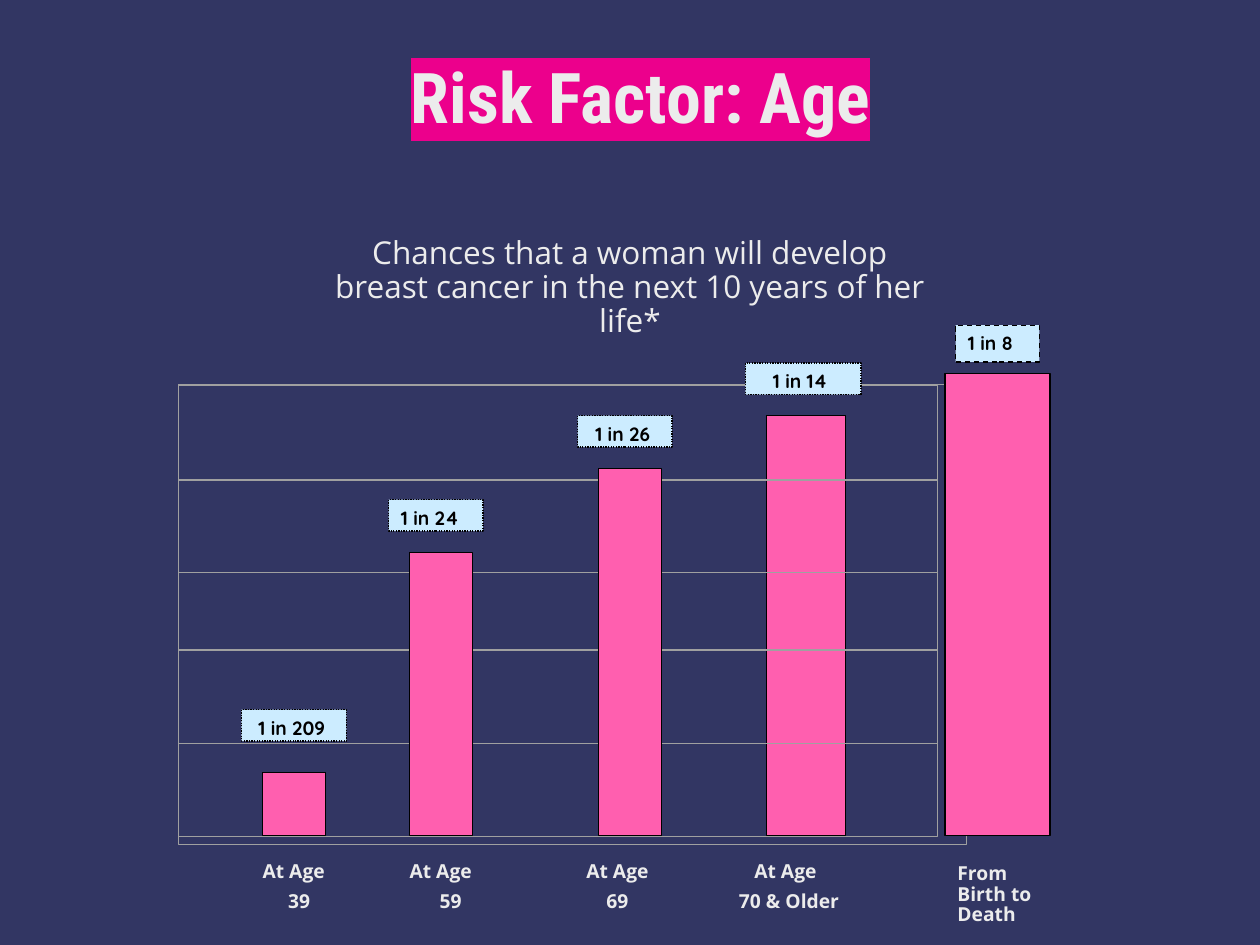
from itertools import pairwise

from lxml import etree
from pptx import Presentation
from pptx.dml.color import RGBColor
from pptx.enum.dml import MSO_LINE
from pptx.enum.shapes import MSO_SHAPE
from pptx.enum.text import MSO_ANCHOR, MSO_AUTO_SIZE, PP_ALIGN
from pptx.oxml.ns import qn
from pptx.util import Pt

COLORS = {
    "background": "323663", "text": "ECECEC", "highlight": "EC008C",
    "bar": "FF5FAF", "label": "CCECFF", "grid": "A0A0A0", "black": "000000",
}
FONTS = {
    "title": {"name": "Roboto Condensed", "size": Pt(40), "bold": True},
    "subtitle": {"name": "Open Sans", "size": Pt(18), "bold": False},
    "axis": {"name": "Open Sans", "size": Pt(11), "bold": True},
    "label": {"name": "Quicksand", "size": Pt(11), "bold": True},
}
FRAME_FORMAT = {
    "word_wrap": True, "auto_size": MSO_AUTO_SIZE.NONE,
    "vertical_anchor": MSO_ANCHOR.TOP,
    "margin_left": Pt(7.2), "margin_right": Pt(7.2),
    "margin_top": Pt(3.6), "margin_bottom": Pt(3.6),
}


def add_box(left, top, width, height, fill=None, line="black", dash=None):
    shape = slide.shapes.add_shape(
        MSO_SHAPE.RECTANGLE, Pt(left), Pt(top), Pt(width), Pt(height))
    shape.shadow.inherit = False
    if fill:
        shape.fill.solid()
        shape.fill.fore_color.rgb = RGBColor.from_string(COLORS[fill])
    else:
        shape.fill.background()
    shape.line.color.rgb = RGBColor.from_string(COLORS[line])
    shape.line.width = Pt(0.75)
    if dash:
        shape.line.dash_style = dash
    return shape


def write_text(shape, lines, font, color="text", **paragraph_format):
    frame = shape.text_frame
    for name, value in FRAME_FORMAT.items():
        setattr(frame, name, value)
    frame.text = "\n".join(lines)
    for paragraph in frame.paragraphs:
        for name, value in paragraph_format.items():
            setattr(paragraph, name, value)
        run = paragraph.runs[0]
        for name, value in FONTS[font].items():
            setattr(run.font, name, value)
        run.font.color.rgb = RGBColor.from_string(COLORS[color])
    return frame


presentation = Presentation()
presentation.slide_width, presentation.slide_height = Pt(720), Pt(540)
slide = presentation.slides.add_slide(presentation.slide_layouts[5])
slide.background.fill.solid()
slide.background.fill.fore_color.rgb = RGBColor.from_string(COLORS["background"])

# Title with a highlight behind its words
title = slide.shapes.title
title.left, title.top, title.width, title.height = Pt(54), Pt(24), Pt(624), Pt(104)
title_frame = write_text(title, ["Risk Factor: Age"], "title",
                         alignment=PP_ALIGN.CENTER)
title_frame.margin_top = Pt(6.5)
highlight = etree.Element(qn("a:highlight"))
etree.SubElement(highlight, qn("a:srgbClr"), val=COLORS["highlight"])
title_run = title_frame.paragraphs[0].runs[0]
title_run.font.fill._xPr.find(qn("a:latin")).addprevious(highlight)

# Subtitle
subtitle = slide.shapes.add_textbox(Pt(180), Pt(132), Pt(360), Pt(46))
write_text(subtitle, ["Chances that a woman will develop",
                      "breast cancer in the next 10 years of her life*"],
           "subtitle", alignment=PP_ALIGN.CENTER, line_spacing=0.9)

# Bars on one baseline: left, width, height; two stand behind the grid
BASELINE = 477.6
bars_behind = [(150, 36, 36), (438, 45, 240)]
bars_in_front = [(234, 36, 162), (342, 36, 210), (540, 60, 264)]
for left, width, height in bars_behind:
    add_box(left, BASELINE - height, width, height, fill="bar")

# Grid bands and the outer frame
band_edges = [220.3, 274.3, 327, 371.5, 424.8, 478.1]
for top, bottom in pairwise(band_edges):
    add_box(102.2, top, 433.5, bottom - top, line="grid")
add_box(102.2, 219.6, 450, 262.8, line="grid")

for left, width, height in bars_in_front:
    add_box(left, BASELINE - height, width, height, fill="bar")

# Odds above each bar: text, left, top, width, height, indent, dash
odds = [
    ("1 in 209", 138, 405.5, 60, 18, 2.5, MSO_LINE.ROUND_DOT),
    ("1 in 24", 222, 285.5, 54, 18, 0, MSO_LINE.ROUND_DOT),
    ("1 in 26", 330, 237.5, 54, 18, 3, MSO_LINE.ROUND_DOT),
    ("1 in 14", 426, 207.5, 66, 18, 8.5, MSO_LINE.ROUND_DOT),
    ("1 in 8", 546, 185.8, 48, 21, 0, MSO_LINE.DASH),
]
for text, left, top, width, height, indent, dash in odds:
    label = add_box(left, top, width, height, fill="label", dash=dash)
    label_frame = write_text(label, [text], "label", "black",
                             alignment=PP_ALIGN.LEFT)
    label_frame.margin_left = Pt(7.2 + indent)
    label_frame.margin_right = 0

# Age captions, set under the bars with centred tab stops
ages = slide.shapes.add_textbox(Pt(131.8), Pt(489), Pt(402), Pt(40))
rows = [["At Age"] * 4, ["39", "59", "69", "70 & Older"]]
row_tabs = [(29, 113, 214, 310), (32, 118.7, 214, 312)]
ages_frame = write_text(ages, ["".join("\t" + cell for cell in row) for row in rows],
                        "axis", line_spacing=0.9)
ages_frame.paragraphs[1].space_before = Pt(5)
for paragraph, tabs in zip(ages_frame.paragraphs, row_tabs):
    tab_list = etree.SubElement(paragraph._p.get_or_add_pPr(), qn("a:tabLst"))
    for position in tabs:
        etree.SubElement(tab_list, qn("a:tab"), pos=str(Pt(position)), algn="ctr")

lifetime = slide.shapes.add_textbox(Pt(540), Pt(490), Pt(60), Pt(47.5))
write_text(lifetime, ["From Birth to Death"], "axis", line_spacing=0.9)

presentation.save("out.pptx")
